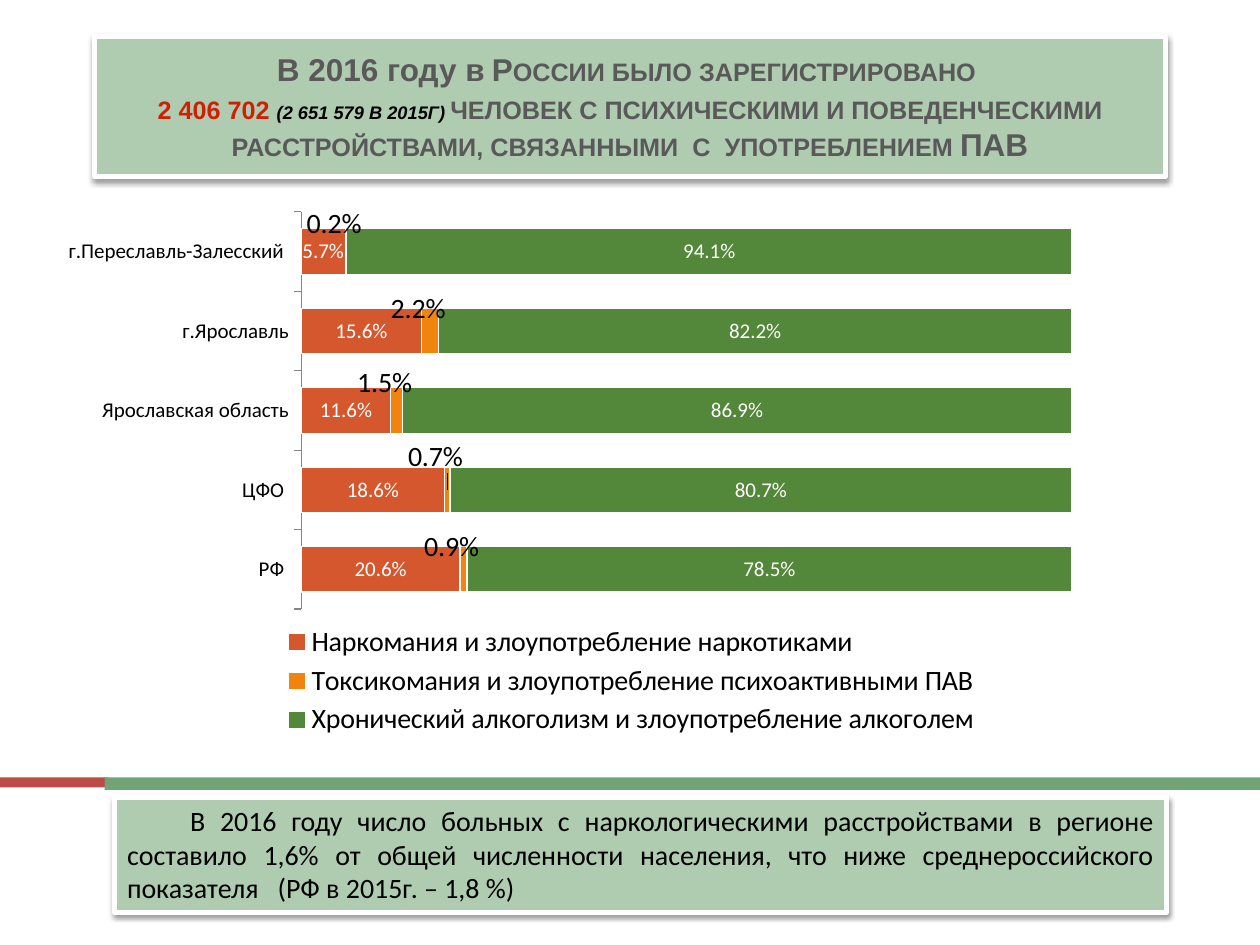
import pptx
import pptx.chart.data
import pptx.dml.color
import pptx.enum.chart
import pptx.enum.shapes
import pptx.enum.text
import pptx.oxml
import pptx.oxml.ns
import pptx.util

Inches, Pt = pptx.util.Inches, pptx.util.Pt
ALIGN = pptx.enum.text.PP_ALIGN
ANCHOR = pptx.enum.text.MSO_ANCHOR
NS = pptx.oxml.ns.nsdecls

COLORS = {
    "panel": "B0CCB0", "white": "FFFFFF", "black": "000000", "title": "595959",
    "accent": "CE2104", "red_bar": "BD4A47", "green_bar": "72A376",
    "axis": "868686", "drugs": "CC3300", "toxic": "F0840E", "alcohol": "538739",
}

TITLE = [
    ("В 2016 году в", {}),
    (" России было зарегистрировано ", {"small": True}),
    ("\n", {}),
    ("2 406 702 ", {"color": "accent", "small": True}),
    ("(2 651 579 в 2015г) ", {"size": 13, "color": "black", "italic": True, "small": True}),
    ("человек с психическими и поведенческими расстройствами, "
     "связанными  с  употреблением ", {"small": True}),
    ("ПАВ", {"small": True}),
]
NOTE = ("\tВ 2016 году число больных с наркологическими расстройствами в регионе "
        "составило 1,6% от общей численности населения, что ниже среднероссийского "
        "показателя   (РФ в 2015г. – 1,8 %)")

CATEGORIES = ["РФ ", "ЦФО ", "Ярославская область", "г.Ярославль", "г.Переславль-Залесский "]
SERIES = [
    ("Наркомания и злоупотребление наркотиками", "drugs", "white",
     [0.206, 0.186, 0.116, 0.156, 0.057]),
    ("Токсикомания и злоупотребление психоактивными ПАВ", "toxic", "black",
     [0.009, 0.007, 0.015, 0.022, 0.002]),
    ("Хронический алкоголизм и злоупотребление алкоголем", "alcohol", "white",
     [0.785, 0.807, 0.869, 0.822, 0.941]),
]
LABEL_SHIFTS = [(-0.01, -0.04), (-0.01, -0.06), (-0.01, -0.05), (-0.01, -0.04), (-0.01, -0.05)]
STRIPES = [((0, 6.17, 0.86, 0.08), "red_bar"), ((0.83, 6.17, 9.17, 0.1), "green_bar")]


def rgb(name):
    return pptx.dml.color.RGBColor.from_string(COLORS[name])


def add_text(p, text, size=18, color="title", font="Arial", bold=False, italic=False, small=False):
    if text == "\n":
        p.add_line_break()
        return
    r = p.add_run()
    r.text = text
    r.font.size = Pt(size)
    r.font.name = font
    r.font.bold = bold
    r.font.italic = italic
    r.font.color.rgb = rgb(color)
    if small:
        r.font._element.set("cap", "small")


def add_rect(slide, box, color):
    sp = slide.shapes.add_shape(pptx.enum.shapes.MSO_SHAPE.RECTANGLE, *map(Inches, box))
    sp.shadow.inherit = False
    sp.fill.solid()
    sp.fill.fore_color.rgb = rgb(color)
    sp.line.fill.background()
    return sp


def add_panel(slide, box, anchor, align):
    sp = add_rect(slide, box, "panel")
    sp.line.color.rgb = rgb("white")
    sp.line.width = Pt(3)
    effects = sp._element.spPr.find(pptx.oxml.ns.qn("a:effectLst"))
    effects.append(pptx.oxml.parse_xml(
        f'<a:outerShdw {NS("a")} blurRad="{Pt(3.1)}" dist="{Pt(1.6)}" dir="5400000" '
        'rotWithShape="0"><a:srgbClr val="000000"><a:alpha val="38000"/></a:srgbClr></a:outerShdw>'))
    tf = sp.text_frame
    tf.word_wrap = True
    tf.vertical_anchor = anchor
    p = tf.paragraphs[0]
    p.alignment = align
    return p


def manual_layout(x, y, w=None, h=None, inner=False):
    parts = ['<c:layoutTarget val="inner"/>'] if inner else []
    if w:
        parts.append('<c:xMode val="edge"/><c:yMode val="edge"/>')
    parts.append(f'<c:x val="{x}"/><c:y val="{y}"/>')
    if w:
        parts.append(f'<c:w val="{w}"/><c:h val="{h}"/>')
    return pptx.oxml.parse_xml(
        f'<c:layout {NS("c")}><c:manualLayout>{"".join(parts)}</c:manualLayout></c:layout>')


def place(element, layout, index):
    for old in element.findall(pptx.oxml.ns.qn("c:layout")):
        element.remove(old)
    element.insert(index, layout)


def style_series(series, color, label_color):
    fmt = series.format
    fmt.fill.solid()
    fmt.fill.fore_color.rgb = rgb(color)
    fmt.line.color.rgb = rgb("white")
    fmt.line.width = Pt(0.75)
    labels = series.data_labels
    labels.show_value = True
    labels.number_format = "0.0%"
    labels.number_format_is_linked = False
    labels.position = pptx.enum.chart.XL_LABEL_POSITION.CENTER
    labels.font.size = Pt(12)
    labels.font.name = "Calibri"
    labels.font.color.rgb = rgb(label_color)


def add_chart(slide):
    data = pptx.chart.data.CategoryChartData(number_format="0.0%")
    data.categories = CATEGORIES
    for name, _, _, values in SERIES:
        data.add_series(name, values)
    kind = pptx.enum.chart.XL_CHART_TYPE.BAR_STACKED
    box = map(Inches, (0.2, 1.55, 9.53, 4.38))
    chart = slide.shapes.add_chart(kind, *box, data).chart
    chart.has_title = False
    chart.font.size = Pt(16)
    chart.font.name = "Calibri"
    chart.font.color.rgb = rgb("black")

    plot = chart.plots[0]
    plot.gap_width = 75
    plot.overlap = 83
    plot.vary_by_categories = False
    for series, (_, color, label_color, _) in zip(plot.series, SERIES):
        style_series(series, color, label_color)
    fill = plot.series[0]._element.find(".//" + pptx.oxml.ns.qn("a:srgbClr"))
    fill.append(pptx.oxml.parse_xml(f'<a:alpha {NS("a")} val="82000"/>'))
    for i, shift in enumerate(LABEL_SHIFTS):
        label = plot.series[1].points[i].data_label
        label.position = pptx.enum.chart.XL_LABEL_POSITION.CENTER
        place(label._dLbl, manual_layout(*shift), 1)

    axis = chart.category_axis
    axis.major_tick_mark = pptx.enum.chart.XL_TICK_MARK.OUTSIDE
    axis.tick_labels.font.size = Pt(12)
    axis.format.line.color.rgb = rgb("axis")
    values = chart.value_axis
    values.minimum_scale, values.maximum_scale = 0, 1.2
    values.has_major_gridlines = False
    values.visible = False

    chart.has_legend = True
    legend = chart.legend
    legend.position = pptx.enum.chart.XL_LEGEND_POSITION.BOTTOM
    legend.include_in_layout = False
    place(legend._element, manual_layout(0.21, 0.77, 0.59, 0.22), 1)
    place(chart._chartSpace.chart.plotArea, manual_layout(0.23, 0.03, 0.77, 0.72, inner=True), 0)


def main():
    prs = pptx.Presentation()
    prs.slide_width, prs.slide_height = Inches(10), Inches(7.5)
    s = prs.slides.add_slide(prs.slide_layouts[6])
    title = add_panel(s, (0.75, 0.29, 8.5, 1.11), ANCHOR.MIDDLE, ALIGN.CENTER)
    for text, style in TITLE:
        add_text(title, text, bold=True, **style)
    add_chart(s)
    note = add_panel(s, (0.91, 6.33, 8.35, 0.91), ANCHOR.TOP, ALIGN.JUSTIFY)
    note.space_after = Pt(6)
    add_text(note, NOTE, size=16, color="black", font="Calibri")
    for box, color in STRIPES:
        add_rect(s, box, color)
    prs.save("out.pptx")


if __name__ == "__main__":
    main()
